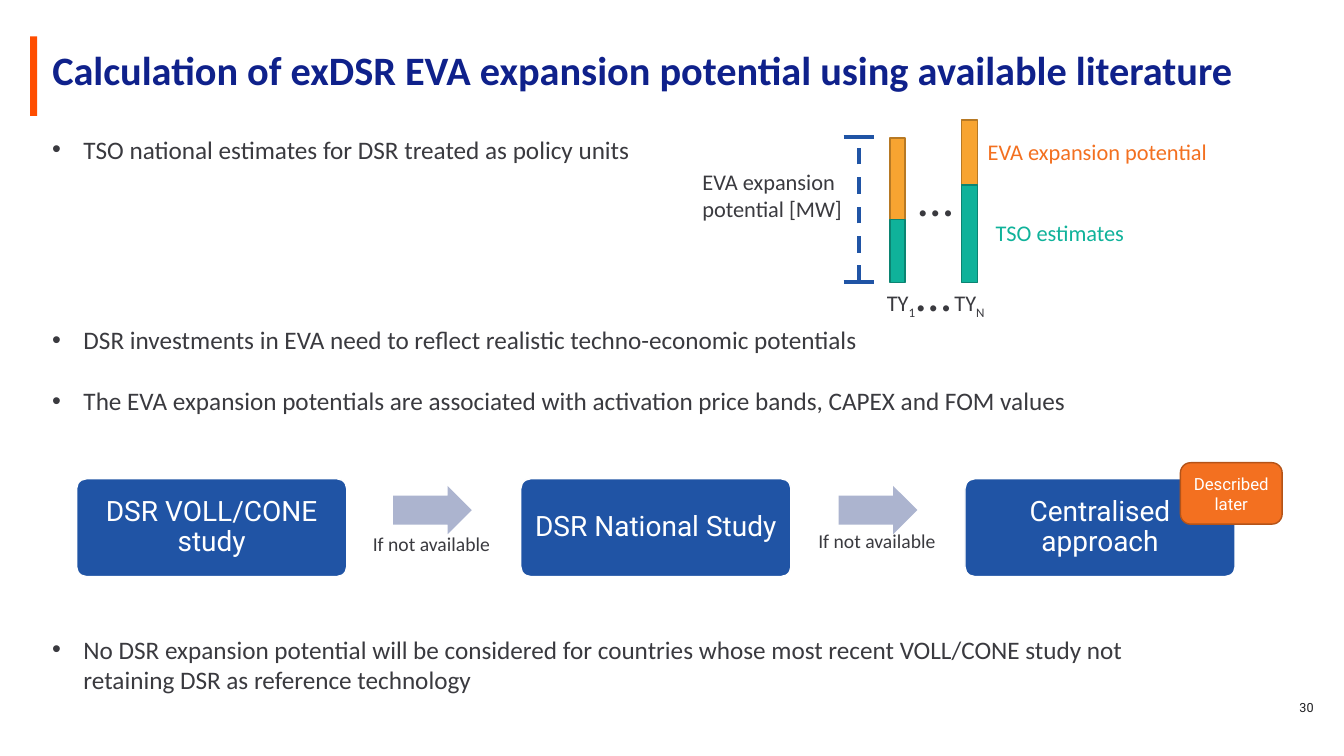
from dataclasses import dataclass

from lxml.etree import SubElement
from pptx import Presentation
from pptx.dml.color import RGBColor
from pptx.enum.dml import MSO_LINE
from pptx.enum.shapes import MSO_CONNECTOR, MSO_SHAPE as Geo
from pptx.enum.text import MSO_ANCHOR as Anchor, PP_ALIGN as Align
from pptx.oxml.ns import qn
from pptx.util import Emu, Inches, Pt

SLIDE_W, SLIDE_H = Inches(13.33), Inches(7.5)
COLUMNS, ROWS = 40, 30


@dataclass(frozen=True)
class Theme:
    body_font: str = "Calibri"
    box_font: str = "Roboto"
    navy: str = "0F218B"
    blue: str = "2054A5"
    accent: str = "FF4D00"
    orange: str = "F37020"
    orange_edge: str = "B45318"
    amber: str = "F7A431"
    amber_edge: str = "B77924"
    teal: str = "0FB29A"
    teal_edge: str = "0B8472"
    arrow: str = "ACB4CF"
    ink: str = "3A3A3F"
    black: str = "1D1D20"
    white: str = "FFFFFF"
    title: float = 28.8
    body: float = 18
    chart: float = 16
    step: float = 20
    note: float = 14
    badge: float = 12
    page: float = 9
    dots: float = 36


T = Theme()


@dataclass(frozen=True)
class Area:
    """A rectangle in grid columns and rows."""
    left: float
    top: float
    width: float
    height: float

    def emu(self) -> tuple[Emu, Emu, Emu, Emu]:
        return col(self.left), row(self.top), col(self.width), row(self.height)


@dataclass(frozen=True)
class Label:
    text: str
    area: Area
    size: float = T.chart
    color: str = T.ink
    font: str = T.body_font
    bold: bool = False
    align: Align = Align.LEFT
    anchor: Anchor = Anchor.TOP
    wrap: bool = True
    subscript: str = ""


@dataclass(frozen=True)
class BulletBox:
    area: Area
    items: tuple[str, ...]


@dataclass(frozen=True)
class YearBar:
    left: float
    width: float
    top: float
    split: float


@dataclass(frozen=True)
class Fallback:
    """An arrow to the next step, with its note below."""
    left: float
    note_top: float


BASELINE, SCALE_TOP, SCALE_X, CAP = 11.2, 5.44, 25.56, 0.45
STEP_LEFT, STEP_PITCH = 2.28, 13.22

BULLETS = (
    BulletBox(Area(1.26, 5.12, 18.51, 1.6),
              ("TSO national estimates for DSR treated as policy units",)),
    BulletBox(Area(1.26, 12.68, 35.04, 4.04),
              ("DSR investments in EVA need to reflect realistic techno-economic potentials",
               "The EVA expansion potentials are associated with activation price bands, "
               "CAPEX and FOM values")),
    BulletBox(Area(1.26, 24.96, 35.04, 4.04),
              ("No DSR expansion potential will be considered for countries whose most "
               "recent VOLL/CONE study not retaining DSR as reference technology",)),
)
BARS = (YearBar(26.49, 0.45, 5.48, 8.72), YearBar(28.62, 0.48, 4.76, 7.34))
STEPS = ("DSR VOLL/CONE study", "DSR National Study", "Centralised approach")
FALLBACKS = (Fallback(11.7, 20.92), Fallback(24.96, 20.8))
LABELS = (
    Label("Calculation of exDSR EVA expansion potential using available literature",
          Area(1.26, 2.04, 38.13, 1.56), T.title, T.navy, bold=True, anchor=Anchor.MIDDLE),
    Label("30", Area(20.25, 27.28, 19.14, 1.6), T.page, T.black, T.box_font,
          align=Align.RIGHT, anchor=Anchor.MIDDLE),
    Label("TSO estimates", Area(29.34, 8.48, 6.15, 1.48), color=T.teal),
    Label("EVA expansion potential", Area(29.1, 5.28, 8.28, 1.48), color=T.orange),
    Label("TY", Area(26.1, 11.28, 2.01, 1.48), subscript="1"),
    Label("TY", Area(28.11, 11.28, 2.01, 1.48), subscript="N"),
    Label("EVA expansion potential [MW]", Area(20.61, 6.48, 4.8, 2.56)),
    Label("…", Area(27.03, 6.4, 1.77, 2.84), T.dots),
    Label("…", Area(26.97, 10.16, 1.77, 2.84), T.dots),
)


def col(n: float) -> Emu:
    return Emu(round(SLIDE_W * n / COLUMNS))


def row(n: float) -> Emu:
    return Emu(round(SLIDE_H * n / ROWS))


def style(r, size: float, color: str, font: str, bold: bool = False) -> None:
    r.font.size, r.font.name, r.font.bold = Pt(size), font, bold
    r.font.color.rgb = RGBColor.from_string(color)


def add_label(slide, label: Label):
    tf = slide.shapes.add_textbox(*label.area.emu()).text_frame
    tf.word_wrap, tf.vertical_anchor = label.wrap, label.anchor
    tf.text = label.text
    p = tf.paragraphs[0]
    p.alignment = label.align
    if label.subscript:
        r = p.add_run()
        r.text = label.subscript
        r.font._element.set("baseline", "-25000")
    for r in p.runs:
        style(r, label.size, label.color, label.font, label.bold)
    return p


def add_bullets(slide, box: BulletBox) -> None:
    tf = slide.shapes.add_textbox(*box.area.emu()).text_frame
    tf.word_wrap = True
    for i, item in enumerate(box.items):
        p = tf.add_paragraph() if i else tf.paragraphs[0]
        p.text = item
        pPr = p._p.get_or_add_pPr()
        pPr.set("marL", str(Inches(0.31)))
        pPr.set("indent", str(-Inches(0.31)))
        SubElement(pPr, qn("a:buFont")).set("typeface", "Arial")
        SubElement(pPr, qn("a:buChar")).set("char", "•")
        if i:
            p.space_before = Pt(22)
        style(p.runs[0], T.body, T.ink, T.body_font)


def add_block(slide, geo: Geo, area: Area, fill: str, edge: str = "",
              text: str = "", size: float = T.step):
    sp = slide.shapes.add_shape(geo, *area.emu())
    sp.shadow.inherit = False
    sp.fill.solid()
    sp.fill.fore_color.rgb = RGBColor.from_string(fill)
    if edge:
        sp.line.color.rgb = RGBColor.from_string(edge)
        sp.line.width = Pt(1)
    else:
        sp.line.fill.background()
    if text:
        tf = sp.text_frame
        tf.text, tf.word_wrap, tf.vertical_anchor = text, True, Anchor.MIDDLE
        tf.paragraphs[0].alignment = Align.CENTER
        style(tf.paragraphs[0].runs[0], size, T.white, T.box_font)
    return sp


def add_line(slide, x1: float, y1: float, x2: float, y2: float, dashed: bool = False) -> None:
    line = slide.shapes.add_connector(MSO_CONNECTOR.STRAIGHT, col(x1), row(y1), col(x2), row(y2))
    line.line.color.rgb = RGBColor.from_string(T.blue)
    line.line.width = Pt(3)
    if dashed:
        line.line.dash_style = MSO_LINE.DASH
    SubElement(line._element.spPr, qn("a:effectLst"))


def add_year_chart(slide) -> None:
    add_line(slide, SCALE_X, BASELINE, SCALE_X, SCALE_TOP, dashed=True)
    for y in (SCALE_TOP, BASELINE):
        add_line(slide, SCALE_X - CAP, y, SCALE_X + CAP, y)
    for bar in BARS:
        for top, bottom, fill, edge in ((bar.top, bar.split, T.amber, T.amber_edge),
                                        (bar.split, BASELINE, T.teal, T.teal_edge)):
            add_block(slide, Geo.RECTANGLE, Area(bar.left, top, bar.width, bottom - top),
                      fill, edge)


def add_flow(slide) -> None:
    for i, step in enumerate(STEPS):
        sp = add_block(slide, Geo.ROUNDED_RECTANGLE,
                       Area(STEP_LEFT + i * STEP_PITCH, 19, 8.04, 3.88), T.blue, T.white, step)
        sp.adjustments[0] = 0.1
        sp.text_frame.paragraphs[0].line_spacing = 0.9
    for fb in FALLBACKS:
        sp = add_block(slide, Geo.RIGHT_ARROW, Area(fb.left, 19.28, 2.34, 1.92), T.arrow)
        sp.adjustments[0], sp.adjustments[1] = 0.6, 0.5
        add_label(slide, Label("If not available", Area(fb.left - 0.9, fb.note_top, 4.14, 1.36),
                               T.note, wrap=False))
    add_block(slide, Geo.ROUNDED_RECTANGLE, Area(35.13, 18.36, 3.03, 2.44),
              T.orange, T.orange_edge, "Described later", T.badge)


def main() -> None:
    prs = Presentation()
    prs.slide_width, prs.slide_height = SLIDE_W, SLIDE_H
    slide = prs.slides.add_slide(prs.slide_layouts[6])
    add_block(slide, Geo.RECTANGLE, Area(0.9, 1.44, 0.21, 3.16), T.accent)
    for box in BULLETS:
        add_bullets(slide, box)
    add_year_chart(slide)
    title, *_ = [add_label(slide, label) for label in LABELS]
    title.line_spacing = Pt(32)
    add_flow(slide)
    prs.save("out.pptx")


if __name__ == "__main__":
    main()
